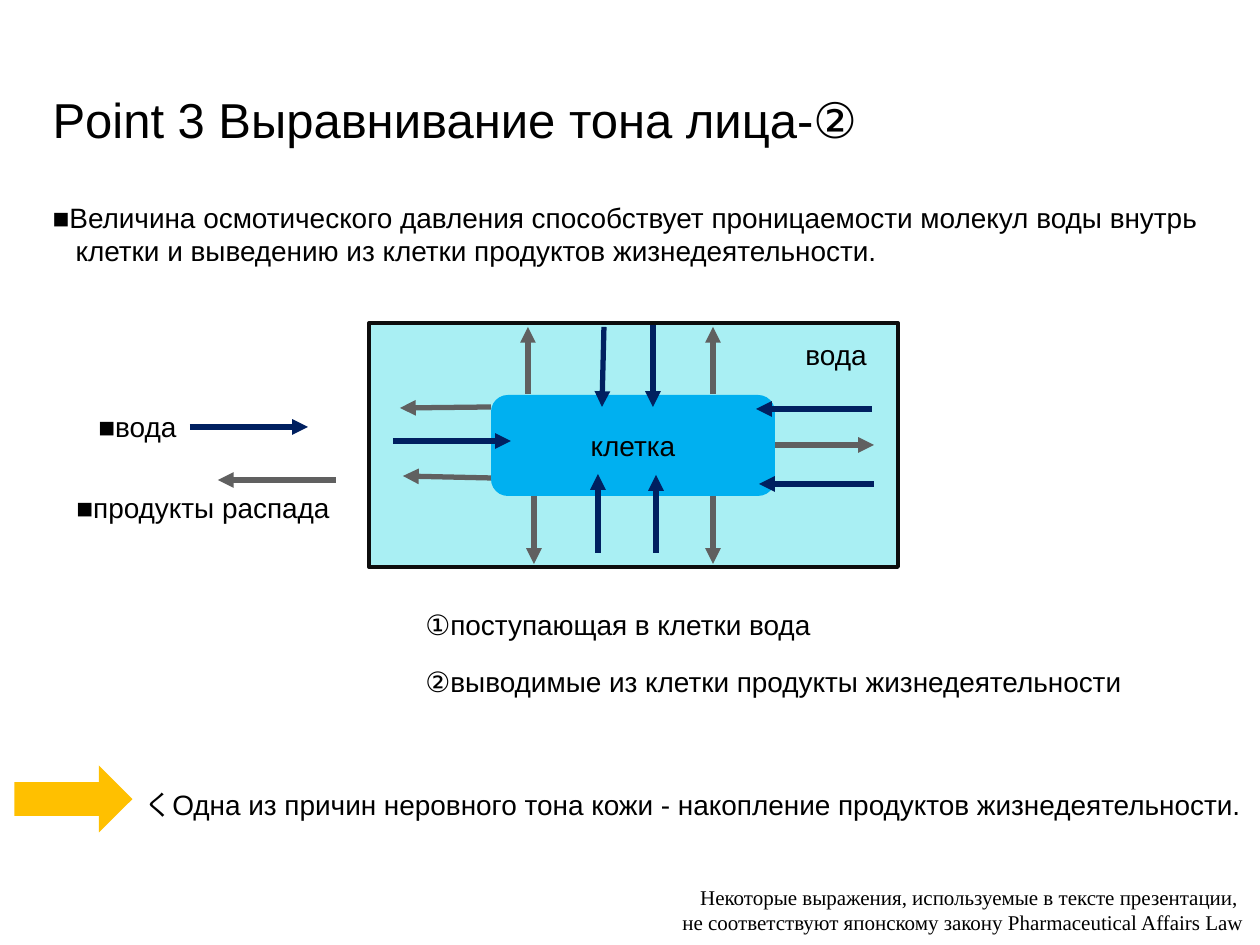
from lxml import etree
from pptx import Presentation
from pptx.dml.color import RGBColor
from pptx.enum.shapes import MSO_CONNECTOR, MSO_SHAPE
from pptx.enum.text import MSO_ANCHOR, MSO_AUTO_SIZE, PP_ALIGN
from pptx.oxml.ns import qn
from pptx.util import Emu, Pt

STRAIGHT = MSO_CONNECTOR.STRAIGHT
RECTANGLE = MSO_SHAPE.RECTANGLE
ROUNDED = MSO_SHAPE.ROUNDED_RECTANGLE
DOWN_ARROW = MSO_SHAPE.DOWN_ARROW
TOP, MIDDLE = MSO_ANCHOR.TOP, MSO_ANCHOR.MIDDLE
LEFT, CENTER, RIGHT = PP_ALIGN.LEFT, PP_ALIGN.CENTER, PP_ALIGN.RIGHT
NO_AUTOSIZE = MSO_AUTO_SIZE.NONE

BLACK = RGBColor(0x00, 0x00, 0x00)
BORDER = RGBColor(0x0D, 0x0D, 0x0D)
POOL = RGBColor(0xA9, 0xEF, 0xF3)
CELL = RGBColor(0x00, 0xB0, 0xF0)
WATER = RGBColor(0x00, 0x20, 0x60)
WASTE = RGBColor(0x60, 0x60, 0x60)
AMBER = RGBColor(0xFF, 0xC0, 0x00)

WATER_ARROWS = [
    (393, 441, 511, 441), (874, 484, 759, 484), (872, 409, 756, 409),
    (598, 553, 598, 474), (656, 553, 656, 475), (604, 327, 602, 407),
    (653, 325, 653, 407), (190, 427, 308, 427),
]
WASTE_ARROWS = [
    (491, 407, 400, 408), (491, 478, 403, 476), (775, 445, 874, 445),
    (534, 496, 534, 564), (713, 496, 713, 564), (528, 394, 528, 327),
    (713, 394, 713, 327), (336, 480, 218, 480),
]
LABELS = [
    ("①поступающая в клетки вода", (413, 601, 415, 47), False),
    ("②выводимые из клетки продукты жизнедеятельности", (413, 658, 726, 47), False),
    ("■продукты распада", (64, 484, 355, 42), True),
    ("■вода", (86, 403, 115, 47), False),
    ("くОдна из причин неровного тона кожи - накопление продуктов жизнедеятельности.",
     (132, 781, 1140, 47), True),
    ("вода", (793, 331, 106, 47), True),
]


def px(length):
    """Turn pixels into EMU."""
    return Emu(round(length * 914400 / 126))


def write(shape, text, size=16, font="Arial", align=LEFT, anchor=TOP, wrap=True):
    """Fill a shape with formatted paragraphs, one for each line."""
    frame = shape.text_frame
    frame.text = text
    frame.word_wrap = wrap
    frame.auto_size = NO_AUTOSIZE
    frame.vertical_anchor = anchor
    for paragraph in frame.paragraphs:
        paragraph.alignment = align
        paragraph.space_before = Pt(0)
        paragraph.font.size = Pt(size)
        paragraph.font.name = font
        paragraph.font.color.rgb = BLACK


class SlideBuilder:
    """Hold the slide and its line style, and add each kind of element."""

    arrow_width = Pt(3)
    border_width = Pt(2.25)

    def __init__(self, slide):
        """Keep the current slide."""
        self.slide = slide

    def placeholder(self, index, text, box, **style):
        """Move and fill a template placeholder."""
        shape = self.slide.placeholders[index]
        shape.left, shape.top, shape.width, shape.height = map(px, box)
        write(shape, text, **style)
        return shape

    def text(self, text, box, **style):
        """Add a text box."""
        write(self.slide.shapes.add_textbox(*map(px, box)), text, **style)

    def shape(self, kind, box, fill, line=None):
        """Add a filled preset shape."""
        shape = self.slide.shapes.add_shape(kind, *map(px, box))
        shape.shadow.inherit = False
        shape.fill.solid()
        shape.fill.fore_color.rgb = fill
        if line is None:
            shape.line.fill.background()
        else:
            shape.line.color.rgb = line
            shape.line.width = self.border_width
        return shape

    def arrow(self, ends, color):
        """Add a straight arrow."""
        connector = self.slide.shapes.add_connector(STRAIGHT, *map(px, ends))
        connector.line.color.rgb = color
        connector.line.width = self.arrow_width
        line = connector.line._get_or_add_ln()
        etree.SubElement(line, qn("a:tailEnd"), type="triangle")
        etree.SubElement(connector._element.spPr, qn("a:effectLst"))


def main():
    """Build and save the slide."""
    presentation = Presentation()
    presentation.slide_width, presentation.slide_height = px(1260), px(945)
    builder = SlideBuilder(presentation.slides.add_slide(presentation.slide_layouts[1]))

    builder.placeholder(0, "Point 3 Выравнивание тона лица-②", (40, 83, 835, 72),
                        size=28, wrap=False)
    body = builder.placeholder(
        1, "■Величина осмотического давления способствует проницаемости молекул воды внутрь\n"
        "клетки и выведению из клетки продуктов жизнедеятельности.",
        (40, 194, 1184, 81), wrap=False)
    for paragraph, margin in zip(body.text_frame.paragraphs, (0, 23)):
        properties = paragraph._p.get_or_add_pPr()
        properties.set("marL", str(px(margin)))
        properties.set("indent", "0")
        etree.SubElement(properties, qn("a:buNone"))

    builder.shape(RECTANGLE, (369, 323, 529, 244), POOL, BORDER)
    cell = builder.shape(ROUNDED, (491, 395, 284, 101), CELL)
    write(cell, "клетка", align=CENTER, anchor=MIDDLE)
    for color, arrows in ((WATER, WATER_ARROWS), (WASTE, WASTE_ARROWS)):
        for ends in arrows:
            builder.arrow(ends, color)

    builder.shape(DOWN_ARROW, (40, 740, 67, 118), AMBER).rotation = 270
    for text, box, wrap in LABELS:
        builder.text(text, box, wrap=wrap)
    builder.text("Некоторые выражения, используемые в тексте презентации, \n"
                 "не соответствуют японскому закону Pharmaceutical Affairs Law",
                 (420, 878, 836, 63), size=12, font="Times New Roman", align=RIGHT)
    presentation.save("out.pptx")


if __name__ == "__main__":
    main()
